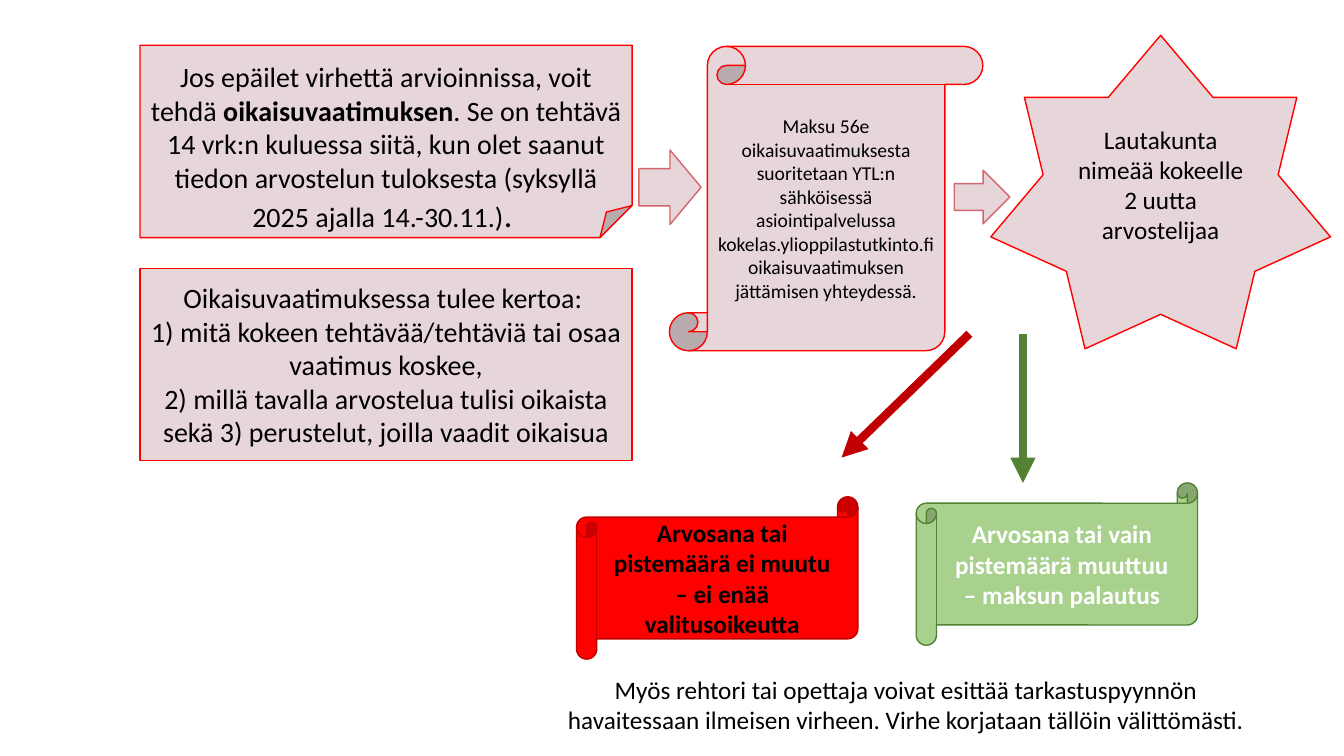
from lxml import etree
from pptx import Presentation
from pptx import util as u
from pptx.dml.color import RGBColor
from pptx.enum import shapes, text
from pptx.oxml.ns import qn

KIND = shapes.MSO_SHAPE
PINK, RED, DARK_RED = "E7D6D9", "FF0000", "C00000"
GREEN, DARK_GREEN, ROSE = "A9D18E", "548235", "D3656D"
BLACK, WHITE = "000000", "FFFFFF"

# Content: each paragraph is a list of (words, bold, size)
appeal = [[
    ("Jos epäilet virhettä arvioinnissa, voit tehdä ", False, 20),
    ("oikaisuvaatimuksen", True, 20),
    (". Se on tehtävä 14 vrk:n kuluessa siitä, kun olet saanut tiedon arvostelun "
     "tuloksesta (syksyllä 2025 ajalla 14.-30.11.)", False, 20),
    (". ", False, 24)]]
payment = [[("Maksu 56e oikaisuvaatimuksesta suoritetaan YTL:n sähköisessä "
             "asiointipalvelussa kokelas.ylioppilastutkinto.fi oikaisuvaatimuksen "
             "jättämisen yhteydessä.", False, 14)]]
board = [[("Lautakunta nimeää kokeelle 2 uutta arvostelijaa", False, 18)]]
unchanged = [[("Arvosana tai pistemäärä ei muutu – ei enää valitusoikeutta", True, 18)]]
changed = [[("Arvosana tai vain pistemäärä muuttuu – maksun palautus", True, 18)]]
reasons = [[(line, False, 20)] for line in (
    "Oikaisuvaatimuksessa tulee kertoa: ",
    "1) mitä kokeen tehtävää/tehtäviä tai osaa vaatimus koskee,",
    "2) millä tavalla arvostelua tulisi oikaista sekä 3) perustelut, joilla vaadit oikaisua")]
footnote = [[("Myös rehtori tai opettaja voivat esittää tarkastuspyynnön havaitessaan "
              "ilmeisen virheen. Virhe korjataan tällöin välittömästi.", False, 18)]]

# Places in centimetres: left, top, width, height
LEFT, WIDE, TALL = 3.53, 12.4, 4.85
SCROLL = (7.09, 4.09)
steps = [
    (KIND.FOLDED_CORNER, (LEFT, 1.14, WIDE, TALL), PINK, RED, appeal, BLACK),
    (KIND.VERTICAL_SCROLL, (16.87, 1.17, 7.9, 7.67), PINK, RED, payment, BLACK),
    (KIND.STAR_7_POINT, (24.97, 0.89, 8.56, 7.9), PINK, RED, board, BLACK),
    (KIND.HORIZONTAL_SCROLL, (14.53, 12.52, *SCROLL), RED, DARK_RED, unchanged, BLACK),
    (KIND.HORIZONTAL_SCROLL, (23.09, 12.17, *SCROLL), GREEN, DARK_GREEN, changed, WHITE),
    (KIND.RIGHT_ARROW, (16.1, 3.78, 1.57, 1.88), PINK, ROSE, [], BLACK),
    (KIND.RIGHT_ARROW, (24.05, 4.29, 1.4, 1.35), PINK, ROSE, [], BLACK),
    (KIND.RECTANGLE, (LEFT, 6.76, WIDE, TALL), PINK, RED, reasons, BLACK),
]
outcomes = [((24.43, 8.41, 21.21, 11.53), DARK_RED),
            ((25.78, 8.41, 25.78, 12.17), DARK_GREEN)]


def colour(value):
    return RGBColor.from_string(value)


def lengths(numbers):
    return [u.Cm(number) for number in numbers]


def write(frame, paragraphs, ink):
    frame.word_wrap = True
    for index, spans in enumerate(paragraphs):
        para = frame.paragraphs[0] if index == 0 else frame.add_paragraph()
        para.alignment = text.PP_ALIGN.CENTER
        for words, bold, size in spans:
            span = para.add_run()
            span.text = words
            span.font.name = "Calibri"
            span.font.size = u.Pt(size)
            span.font.bold = bold
            span.font.color.rgb = colour(ink)


def add_step(page, kind, place, fill, edge, paragraphs, ink):
    box = page.shapes.add_shape(kind, *lengths(place))
    box.shadow.inherit = False
    box.fill.solid()
    box.fill.fore_color.rgb = colour(fill)
    box.line.color.rgb = colour(edge)
    box.line.width = u.Pt(1)
    box.text_frame.vertical_anchor = text.MSO_ANCHOR.MIDDLE
    write(box.text_frame, paragraphs, ink)
    return box


def add_arrow(page, ends, ink):
    arrow = page.shapes.add_connector(shapes.MSO_CONNECTOR.STRAIGHT, *lengths(ends))
    arrow.line.color.rgb = colour(ink)
    arrow.line.width = u.Pt(6)
    etree.SubElement(arrow.line._get_or_add_ln(), qn("a:tailEnd"), type="triangle")
    etree.SubElement(arrow._element.spPr, qn("a:effectLst"))


def main():
    deck = Presentation()
    deck.slide_width, deck.slide_height = lengths((33.87, 19.05))
    page = deck.slides.add_slide(deck.slide_layouts[6])

    # Steps of the appeal and its two outcomes
    boxes = [add_step(page, *step) for step in steps]

    # The folded note starts near its upper edge
    note = boxes[0].text_frame
    note.vertical_anchor = text.MSO_ANCHOR.TOP
    note.margin_top = u.Cm(0.36)
    note.margin_bottom = 0

    # Arrows to the outcomes
    for ends, ink in outcomes:
        add_arrow(page, ends, ink)

    # Closing remark
    remark = page.shapes.add_textbox(*lengths((13.56, 16.87, 18.54, 1.8)))
    write(remark.text_frame, footnote, BLACK)

    deck.save("out.pptx")


if __name__ == "__main__":
    main()
